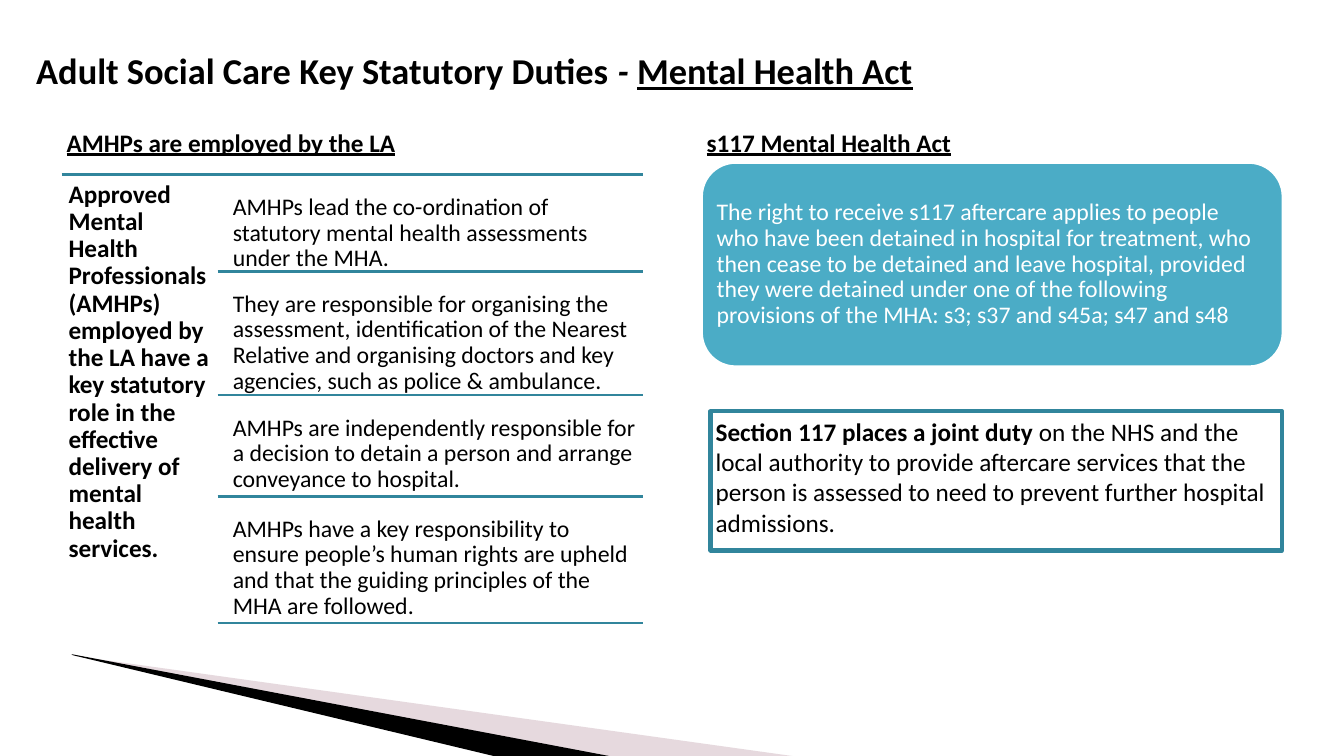
from lxml.etree import SubElement
from pptx import Presentation
from pptx.dml.color import RGBColor
from pptx.enum.shapes import MSO_CONNECTOR, MSO_SHAPE
from pptx.enum.text import MSO_ANCHOR, PP_ALIGN
from pptx.oxml.ns import qn
from pptx.util import Pt

COLOURS = {
    "text": "000000",
    "white": "FFFFFF",
    "rule": "31859C",
    "panel": "4BACC6",
    "mauve": "C1A1AD",
}

ROLE = (
    "Approved Mental Health Professionals (AMHPs) employed by the LA have a key "
    "statutory role in the effective delivery of mental health services."
)
DUTIES = [
    ("AMHPs lead the co-ordination of statutory mental health assessments under the MHA.", 193.7),
    ("They are responsible for organising the assessment, identification of the Nearest "
     "Relative and organising doctors and key agencies, such as police & ambulance.", 282.2),
    ("AMHPs are independently responsible for a decision to detain a person and arrange "
     "conveyance to hospital.", 354.4),
    ("AMHPs have a key responsibility to ensure people’s human rights are upheld and that "
     "the guiding principles of the MHA are followed.", 445),
]
AFTERCARE = (
    "The right to receive s117 aftercare applies to people who have been detained in "
    "hospital for treatment, who then cease to be detained and leave hospital, provided "
    "they were detained under one of the following provisions of the MHA: s3; s37 and "
    "s45a; s47 and s48"
)
JOINT_DUTY = [
    ("Section 117 places a joint duty ", {"bold": True}),
    ("on the NHS and the local authority to provide aftercare services that the person is "
     "assessed to need to prevent further hospital admissions.", {}),
]
LIST_TOP = 124.6
DUTY_GAP = 9.6


def colour(name):
    """Return the named colour."""
    return RGBColor.from_string(COLOURS[name])


def write(shape, spans, size=18, ink="text", inset=3.6, anchor=MSO_ANCHOR.TOP,
          spacing=None, **style):
    """Fill a shape with one paragraph made of a string or (text, style) spans."""
    frame = shape.text_frame
    frame.word_wrap = True
    frame.vertical_anchor = anchor
    frame.margin_left = frame.margin_right = Pt(inset)
    frame.margin_top = frame.margin_bottom = Pt(inset)
    para = frame.paragraphs[0]
    para.alignment = PP_ALIGN.LEFT
    if spacing:
        para.line_spacing = spacing
    for text, extra in [(spans, {})] if isinstance(spans, str) else spans:
        span = para.add_run()
        span.text = text
        span.font.name = "Calibri"
        span.font.size = Pt(size)
        span.font.color.rgb = colour(ink)
        for key, value in {**style, **extra}.items():
            setattr(span.font, key, value)


def add_text(page, spans, left, top, width, height, **style):
    """Add a text box."""
    box = page.shapes.add_textbox(Pt(left), Pt(top), Pt(width), Pt(height))
    write(box, spans, **style)


def add_panel(page, kind, left, top, width, height, line, weight, fill=None):
    """Add an outlined panel and return it."""
    panel = page.shapes.add_shape(kind, Pt(left), Pt(top), Pt(width), Pt(height))
    panel.shadow.inherit = False
    panel.line.color.rgb = colour(line)
    panel.line.width = Pt(weight)
    if fill:
        panel.fill.solid()
        panel.fill.fore_color.rgb = colour(fill)
    else:
        panel.fill.background()
    return panel


def add_rule(page, left, top, right):
    """Add a horizontal rule."""
    rule = page.shapes.add_connector(
        MSO_CONNECTOR.STRAIGHT, Pt(left), Pt(top), Pt(right), Pt(top))
    rule.line.color.rgb = colour("rule")
    rule.line.width = Pt(2)
    SubElement(rule.element.spPr, qn("a:effectLst"))


def add_wedge(page, points, fill, opacity=100):
    """Add a filled wedge through the given points."""
    start, *others = [(Pt(x), Pt(y)) for x, y in points]
    builder = page.shapes.build_freeform(*start)
    builder.add_line_segments(others, close=True)
    wedge = builder.convert_to_shape()
    wedge.shadow.inherit = False
    wedge.line.fill.background()
    wedge.fill.solid()
    wedge.fill.fore_color.rgb = colour(fill)
    if opacity < 100:
        tint = wedge.element.spPr.find(qn("a:solidFill"))[0]
        SubElement(tint, qn("a:alpha"), val=str(opacity * 1000))


def add_duties(page):
    """Add the role statement and its ruled list of duties."""
    add_rule(page, 44, LIST_TOP, 459.4)
    add_text(page, ROLE, 44, LIST_TOP, 111.6, 330.5, inset=5, spacing=0.9, bold=True)
    previous = LIST_TOP
    for duty, bottom in DUTIES:
        top = previous + DUTY_GAP
        add_text(page, duty, 161.3, top, 298, bottom - top,
                 size=17, inset=5, spacing=0.9)
        add_rule(page, 155.5, bottom, 459)
        previous = bottom


def add_aftercare(page):
    """Add the aftercare panel and the joint duty box."""
    joint = add_panel(page, MSO_SHAPE.RECTANGLE, 507.6, 293.8, 408.2, 99.4, "rule", 3)
    write(joint, JOINT_DUTY)
    add_panel(page, MSO_SHAPE.ROUNDED_RECTANGLE, 501.1, 116, 415.4, 146, "white", 2, "panel")
    add_text(page, AFTERCARE, 506.9, 123.1, 402.5, 131.8, size=17, ink="white",
             inset=5, anchor=MSO_ANCHOR.MIDDLE, spacing=0.9)


def main():
    """Build the slide and save it."""
    deck = Presentation()
    deck.slide_width, deck.slide_height = Pt(960), Pt(540)
    page = deck.slides.add_slide(deck.slide_layouts[6])
    add_wedge(page, [(52.6, 468.4), (571, 540.7), (437.8, 540.7), (52.6, 468)], "mauve", 40)
    add_wedge(page, [(51.1, 467.3), (438.5, 540.7), (357.1, 541.1), (51.8, 468)], "text")
    title = [
        ("Adult Social Care Key Statutory Duties", {}),
        (" - ", {"italic": True}),
        ("Mental Health Act", {"underline": True}),
    ]
    add_text(page, title, 22.3, 21.6, 768.2, 56.9, size=26,
             anchor=MSO_ANCHOR.MIDDLE, bold=True)
    for heading, left, width in [("AMHPs are employed by the LA", 44, 316.8),
                                 ("s117 Mental Health Act", 501.1, 207.4)]:
        add_text(page, heading, left, 87.1, width, 28.8, bold=True, underline=True)
    add_duties(page)
    add_aftercare(page)
    deck.save("out.pptx")


if __name__ == "__main__":
    main()
